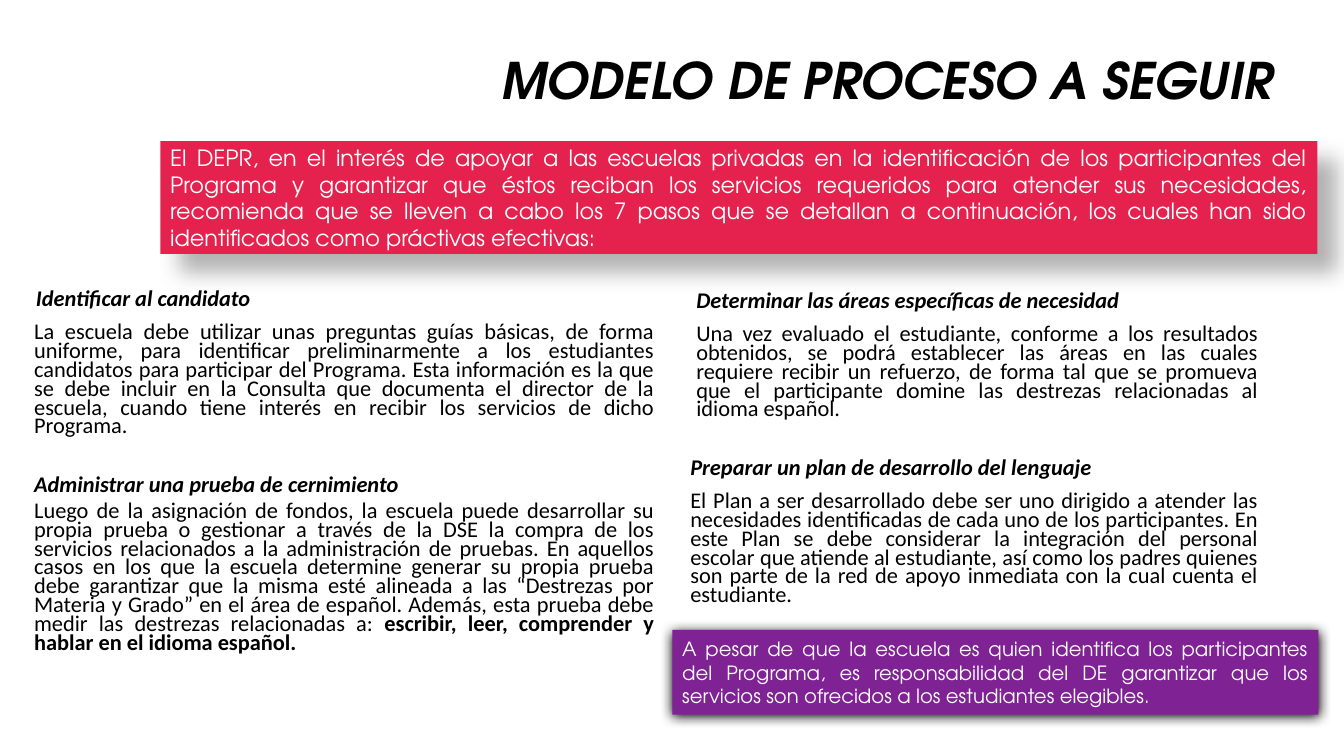
from dataclasses import dataclass

from lxml.etree import SubElement
from pptx import Presentation
from pptx.dml.color import RGBColor
from pptx.enum.shapes import MSO_SHAPE
from pptx.enum.text import MSO_ANCHOR, PP_ALIGN
from pptx.oxml.ns import qn
from pptx.util import Pt


@dataclass(frozen=True)
class Theme:
    display: str = "TeX Gyre Adventor"
    body: str = "Calibri"
    black: str = "000000"
    white: str = "FFFFFF"
    red: str = "E5224E"
    purple: str = "7F2294"
    title_size: int = 36
    body_size: int = 16
    note_size: int = 14
    tight: float = 0.7
    section_gap: float = 28.67


THEME = Theme()


@dataclass(frozen=True)
class Section:
    heading: str
    text: str
    strong: str = ""
    gap: float = 10
    heading_indent: float = 4.3
    text_indent: float = 4.3


LEFT_SECTIONS = [
    Section(
        "Identificar al candidato",
        "La escuela debe utilizar unas preguntas guías básicas, de forma uniforme, para "
        "identificar preliminarmente a los estudiantes candidatos para participar del "
        "Programa. Esta información es la que se debe incluir en la Consulta que documenta "
        "el director de la escuela, cuando tiene interés en recibir los servicios de dicho "
        "Programa.",
        heading_indent=5.5),
    Section(
        "Administrar una prueba de cernimiento",
        "Luego de la asignación de fondos, la escuela puede desarrollar su propia prueba o "
        "gestionar a través de la DSE la compra de los servicios relacionados a la "
        "administración de pruebas. En aquellos casos en los que la escuela determine "
        "generar su propia prueba debe garantizar que la misma esté alineada a las "
        "“Destrezas por Materia y Grado” en el área de español. Además, esta prueba debe "
        "medir las destrezas relacionadas a: ",
        strong="escribir, leer, comprender y hablar en el idioma español.",
        gap=5),
]

RIGHT_SECTIONS = [
    Section(
        "Determinar las áreas específicas de necesidad",
        "Una vez evaluado el estudiante, conforme a los resultados obtenidos, se podrá "
        "establecer las áreas en las cuales requiere recibir un refuerzo, de forma tal que "
        "se promueva que el participante domine las destrezas relacionadas al idioma "
        "español."),
    Section(
        "Preparar un plan de desarrollo del lenguaje",
        "El Plan a ser desarrollado debe ser uno dirigido a atender las necesidades "
        "identificadas de cada uno de los participantes. En este Plan se debe considerar la "
        "integración del personal escolar que atiende al estudiante, así como los padres "
        "quienes son parte de la red de apoyo inmediata con la cual cuenta el estudiante.",
        heading_indent=0, text_indent=0),
]

INTRO = (
    "El DEPR, en el interés de apoyar a las escuelas privadas en la identificación de los "
    "participantes del Programa y garantizar que éstos reciban los servicios requeridos para "
    "atender sus necesidades, recomienda que se lleven a cabo los 7 pasos que se detallan a "
    "continuación, los cuales han sido identificados como práctivas efectivas:")

NOTE = (
    "A pesar de que la escuela es quien identifica los participantes del Programa, es "
    "responsabilidad del DE garantizar que los servicios son ofrecidos a los estudiantes "
    "elegibles.")


def style(r, font, size, color, bold=False, italic=False):
    r.font.name = font
    r.font.size = Pt(size)
    r.font.color.rgb = RGBColor.from_string(color)
    r.font.bold = bold
    r.font.italic = italic


def add_shadow(sp, alpha, blur, distance, angle):
    effects = sp._element.spPr.find(qn("a:effectLst"))
    shadow = SubElement(effects, qn("a:outerShdw"), blurRad=str(Pt(blur)),
                        dist=str(Pt(distance)), dir=str(angle * 60000),
                        algn="tl", rotWithShape="0")
    color = SubElement(shadow, qn("a:srgbClr"), val=THEME.black)
    SubElement(color, qn("a:alpha"), val=str(alpha * 1000))


def add_title(s, box, text):
    tf = s.shapes.add_textbox(*map(Pt, box)).text_frame
    tf.word_wrap = True
    tf.vertical_anchor = MSO_ANCHOR.MIDDLE
    tf.text = text
    p = tf.paragraphs[0]
    p.alignment = PP_ALIGN.CENTER
    p.line_spacing = 0.9
    style(p.runs[0], THEME.display, THEME.title_size, THEME.black, bold=True, italic=True)


def add_banner(s, box, text, fill, size, shadow):
    sp = s.shapes.add_shape(MSO_SHAPE.RECTANGLE, *map(Pt, box))
    sp.fill.solid()
    sp.fill.fore_color.rgb = RGBColor.from_string(fill)
    sp.line.fill.background()
    sp.shadow.inherit = False
    add_shadow(sp, *shadow)
    tf = sp.text_frame
    tf.word_wrap = True
    tf.vertical_anchor = MSO_ANCHOR.MIDDLE
    tf.text = text
    p = tf.paragraphs[0]
    p.alignment = PP_ALIGN.JUSTIFY
    style(p.runs[0], THEME.display, size, THEME.white)


def add_column(s, box, top_inset, sections):
    tf = s.shapes.add_textbox(*map(Pt, box)).text_frame
    tf.word_wrap = True
    tf.margin_top = Pt(top_inset)

    def add_paragraph(first, text, indent, gap, heading=False):
        p = tf.paragraphs[0] if first else tf.add_paragraph()
        p.text = text
        p.alignment = PP_ALIGN.LEFT if heading else PP_ALIGN.JUSTIFY
        p.line_spacing = THEME.tight
        if not first:
            p.space_before = Pt(gap)
        p._p.get_or_add_pPr().set("marL", str(Pt(indent)))
        style(p.runs[0], THEME.body, THEME.body_size, THEME.black, heading, heading)
        return p

    for i, section in enumerate(sections):
        add_paragraph(i == 0, section.heading, section.heading_indent,
                      THEME.section_gap, heading=True)
        p = add_paragraph(False, section.text, section.text_indent, section.gap)
        if section.strong:
            r = p.add_run()
            r.text = section.strong
            style(r, THEME.body, THEME.body_size, THEME.black, bold=True)


def main():
    prs = Presentation()
    prs.slide_width, prs.slide_height = Pt(960), Pt(540)
    s = prs.slides.add_slide(prs.slide_layouts[6])

    # Title
    add_title(s, (329, 36, 609, 47.5), "MODELO DE PROCESO A SEGUIR")

    # Steps in two columns
    add_column(s, (13, 187.9, 461.5, 294.5), 20.6, LEFT_SECTIONS)
    add_column(s, (486, 182.2, 419.8, 257), 27.7, RIGHT_SECTIONS)

    # Introduction and closing note
    add_banner(s, (114.5, 100.8, 826.5, 80.6), INTRO, THEME.red, THEME.body_size,
               shadow=(30, 15, 18, 45))
    add_banner(s, (480.2, 450, 461.5, 60.5), NOTE, THEME.purple, THEME.note_size,
               shadow=(100, 8.5, 1, 90))

    prs.save("out.pptx")


if __name__ == "__main__":
    main()
